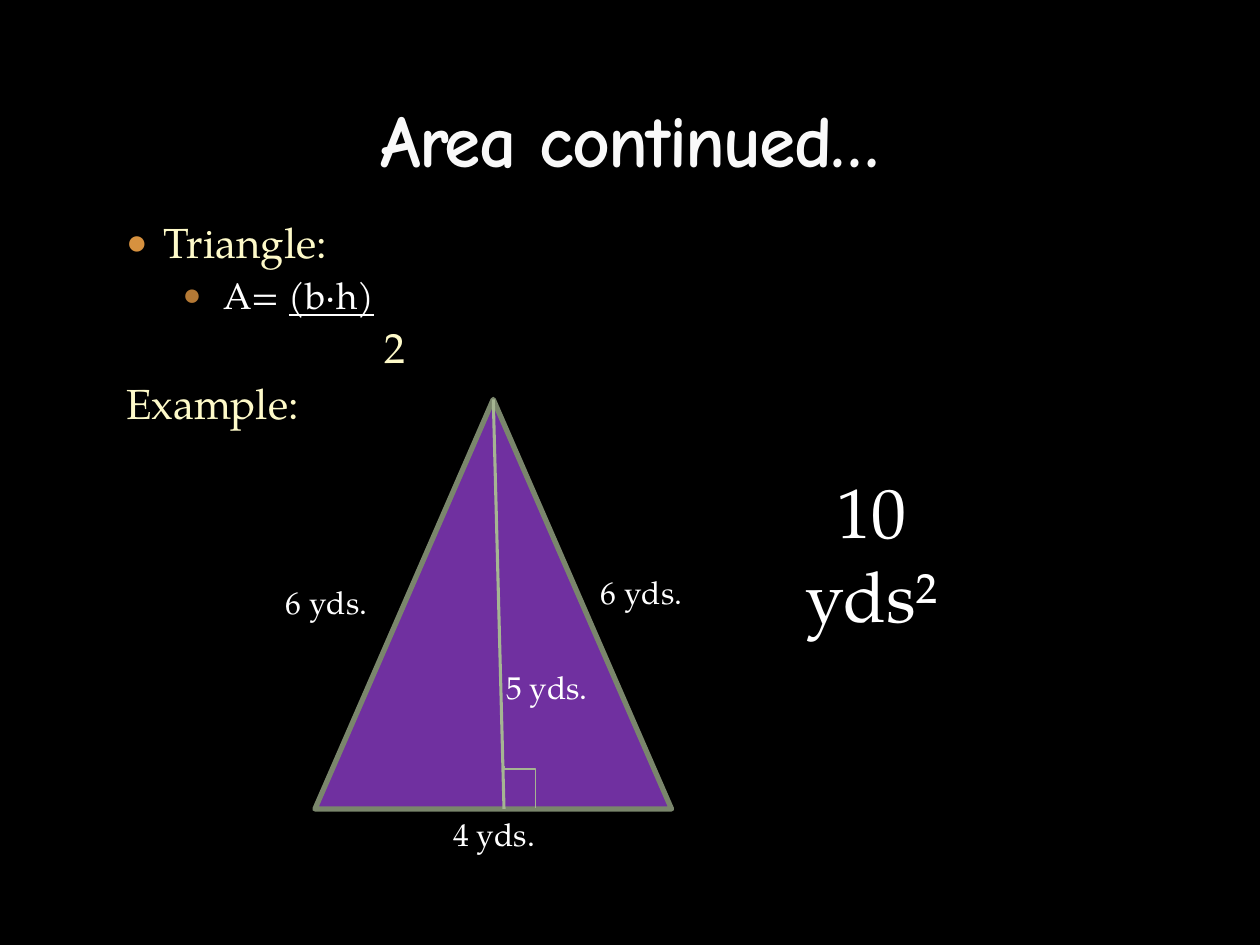
from dataclasses import dataclass

from lxml import etree
from pptx import Presentation
from pptx import util as u
from pptx.dml.color import RGBColor
from pptx.enum import shapes, text
from pptx.oxml.ns import qn


@dataclass(frozen=True)
class Theme:
    background: str = "000000"
    title: str = "F9F9F9"
    heading: str = "FEFAC9"
    plain: str = "FFFFFF"
    bullet: str = "D6913F"
    sub_bullet: str = "B47935"
    triangle: str = "7030A0"
    outline: str = "7A866C"
    height_line: str = "A5B592"
    title_font: str = "Comic Neue"
    text_font: str = "TeX Gyre Pagella"
    title_size: int = 42
    answer_size: int = 40
    heading_size: int = 24
    formula_size: int = 21
    label_size: int = 18


THEME = Theme()


def add_text(paragraph, words, *, size, color, font=THEME.text_font,
             bold=False, underline=False, spacing=None):
    run = paragraph.add_run()
    run.text = words
    run.font.name = font
    run.font.size = u.Pt(size)
    run.font.color.rgb = RGBColor.from_string(color)
    run.font.bold = bold
    run.font.underline = underline
    if spacing is not None:
        run.font._element.set("spc", str(spacing))


def set_bullet(paragraph, margin, indent, color=None):
    """Set the indents, and a round bullet if a colour is given."""
    properties = paragraph._p.get_or_add_pPr()
    properties.set("marL", str(u.Inches(margin)))
    properties.set("indent", str(u.Inches(indent)))
    if color is None:
        etree.SubElement(properties, qn("a:buNone"))
        return
    bullet_color = etree.SubElement(properties, qn("a:buClr"))
    etree.SubElement(bullet_color, qn("a:srgbClr"), val=color)
    etree.SubElement(properties, qn("a:buSzPct"), val="85000")
    etree.SubElement(properties, qn("a:buFont"), typeface="Arial")
    etree.SubElement(properties, qn("a:buChar"), char="●")


def place(shape, left, top, width, height):
    shape.left, shape.top = u.Inches(left), u.Inches(top)
    shape.width, shape.height = u.Inches(width), u.Inches(height)


class SlideBuilder:
    def __init__(self, slide, theme):
        self.slide = slide
        self.theme = theme
        fill = slide.background.fill
        fill.solid()
        fill.fore_color.rgb = RGBColor.from_string(theme.background)

    def title(self, words, box):
        shape = self.slide.shapes.title
        place(shape, *box)
        frame = shape.text_frame
        frame.vertical_anchor = text.MSO_ANCHOR.BOTTOM
        paragraph = frame.paragraphs[0]
        paragraph.alignment = text.PP_ALIGN.CENTER
        add_text(paragraph, words, size=self.theme.title_size,
                 color=self.theme.title, font=self.theme.title_font,
                 bold=True, spacing=-100)

    def body(self, items, box):
        """Fill the body; an item is level, margin, indent, bullet colour, runs."""
        shape = self.slide.placeholders[1]
        place(shape, *box)
        frame = shape.text_frame
        frame.auto_size = text.MSO_AUTO_SIZE.NONE
        for number, (level, margin, indent, bullet, runs) in enumerate(items):
            paragraph = frame.add_paragraph() if number else frame.paragraphs[0]
            paragraph.level = level
            paragraph.space_before = u.Pt(3)
            set_bullet(paragraph, margin, indent, bullet)
            for words, style in runs:
                add_text(paragraph, words, **style)

    def label(self, words, box, size, alignment=text.PP_ALIGN.LEFT):
        left, top, width, height = map(u.Inches, box)
        frame = self.slide.shapes.add_textbox(left, top, width, height).text_frame
        frame.word_wrap = True
        frame.auto_size = text.MSO_AUTO_SIZE.SHAPE_TO_FIT_TEXT
        paragraph = frame.paragraphs[0]
        paragraph.alignment = alignment
        add_text(paragraph, words, size=size, color=self.theme.plain)

    def triangle(self, box):
        shape = self.slide.shapes.add_shape(
            shapes.MSO_SHAPE.ISOSCELES_TRIANGLE, *map(u.Inches, box))
        shape.shadow.inherit = False
        shape.fill.solid()
        shape.fill.fore_color.rgb = RGBColor.from_string(self.theme.triangle)
        shape.line.color.rgb = RGBColor.from_string(self.theme.outline)
        shape.line.width = u.Pt(3)
        return shape

    def connector(self, kind, start, end, width):
        line = self.slide.shapes.add_connector(
            kind, *map(u.Inches, (*start, *end)))
        line.line.color.rgb = RGBColor.from_string(self.theme.height_line)
        line.line.width = u.Pt(width)
        etree.SubElement(line._element.spPr, qn("a:effectLst"))
        return line

    def right_angle(self, start, end):
        """Draw the corner mark as an elbow turned a quarter to the left."""
        elbow = self.connector(shapes.MSO_CONNECTOR.ELBOW, start, end, 1)
        properties = elbow._element.spPr
        properties.find(qn("a:xfrm")).set("rot", "16200000")
        geometry = properties.find(qn("a:prstGeom"))
        adjustments = geometry.find(qn("a:avLst"))
        if adjustments is None:
            adjustments = etree.SubElement(geometry, qn("a:avLst"))
        etree.SubElement(adjustments, qn("a:gd"), name="adj1", fmla="val 7700")


def main():
    presentation = Presentation()
    presentation.slide_width = u.Inches(10)
    presentation.slide_height = u.Inches(7.5)
    slide = presentation.slides.add_slide(presentation.slide_layouts[1])
    builder = SlideBuilder(slide, THEME)

    heading = dict(size=THEME.heading_size, color=THEME.heading)
    formula = dict(size=THEME.formula_size, color=THEME.plain)
    builder.body([
        (0, 0.7, -0.3, THEME.bullet, [("Triangle:", heading)]),
        (1, 1.17, -0.32, THEME.sub_bullet,
         [("A= ", formula), ("(b·h)", dict(formula, underline=True))]),
        (0, 2.45, 0, None, [("2", heading)]),
        (0, 0.7, -0.3, None, [("Example:", heading)]),
    ], (0.5, 1.67, 9, 5))
    builder.title("Area continued…", (0.5, 0.17, 9, 1.33))

    triangle = builder.triangle((2.5, 3.17, 2.83, 3.25))
    height_line = builder.connector(
        shapes.MSO_CONNECTOR.STRAIGHT, (3.92, 3.17), (4, 6.42), 1.75)
    height_line.begin_connect(triangle, 0)
    builder.right_angle((4.29, 6.12), (3.96, 6.37))

    for words, left, top in (("6 yds.", 2.17, 4.58), ("6 yds.", 4.67, 4.5),
                             ("4 yds.", 3.5, 6.42), ("5 yds.", 3.92, 5.25)):
        builder.label(words, (left, top, 1, 0.42), THEME.label_size)
    builder.label("10 yds²", (6, 3.67, 1.83, 0.77), THEME.answer_size,
                  text.PP_ALIGN.CENTER)

    presentation.save("out.pptx")


if __name__ == "__main__":
    main()
